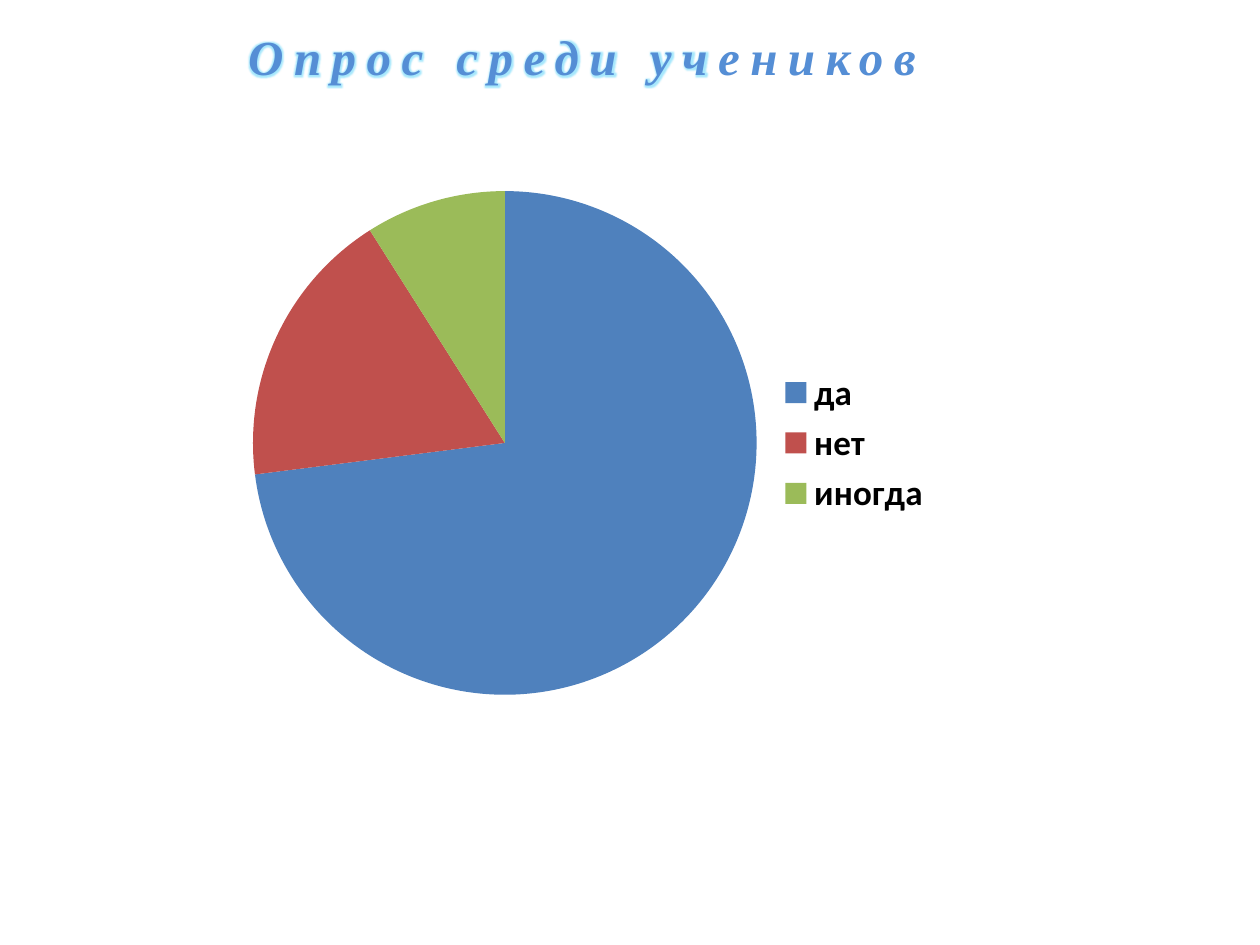
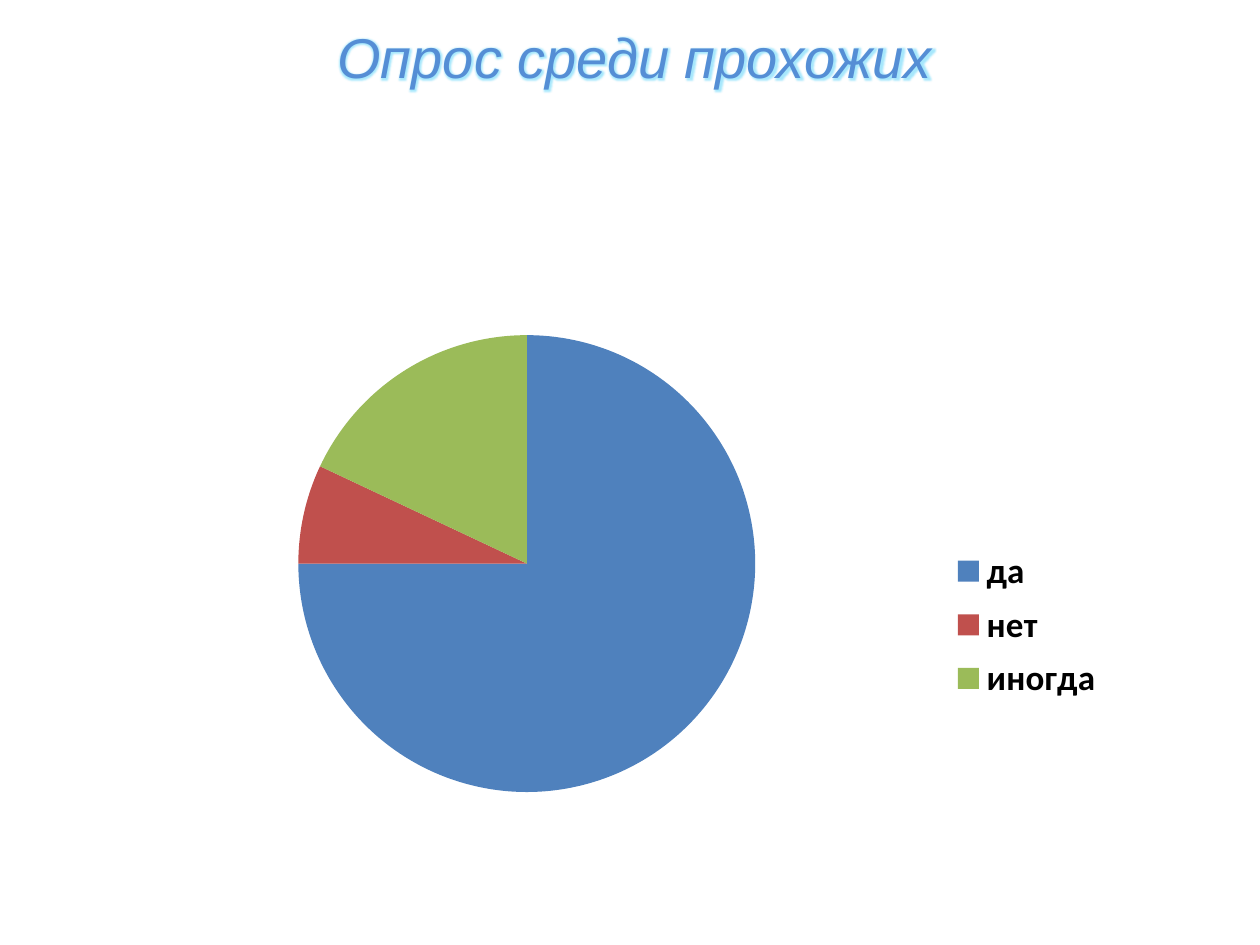
from dataclasses import dataclass
from typing import Optional

from pptx import Presentation
from pptx.chart.data import CategoryChartData
from pptx.dml.color import RGBColor
from pptx.enum.chart import XL_CHART_TYPE as ChartType, XL_LEGEND_POSITION as LegendPosition
from pptx.enum.text import MSO_ANCHOR as Anchor, MSO_AUTO_SIZE as AutoSize, PP_ALIGN as Align
from pptx.oxml import parse_xml
from pptx.oxml.ns import nsdecls, qn
from pptx.util import Cm, Pt

TITLE_COLOR = "558ED5"
GLOW_COLOR = "00BDF8"
TEXT_COLOR = "000000"
ANSWERS = {"да": "4F81BD", "нет": "C0504D", "иногда": "9BBB59"}
CHART_FONT = "Calibri"
TITLE_ONLY = 5


@dataclass(frozen=True)
class Frame:
    left: float
    top: float
    width: float
    height: float

    def lengths(self) -> tuple:
        return Cm(self.left), Cm(self.top), Cm(self.width), Cm(self.height)


@dataclass(frozen=True)
class TitleStyle:
    frame: Frame
    font: str
    size: int
    align: Align
    bold: bool = False
    spacing: int = 0
    outline: float = 0


@dataclass(frozen=True)
class Survey:
    title: str
    style: TitleStyle
    chart_frame: Frame
    shares: tuple
    # Fractions of the chart area
    plot_area: Optional[Frame] = None
    legend_area: Optional[Frame] = None


SURVEYS = (
    Survey(
        "Опрос среди учеников",
        TitleStyle(Frame(4.75, 0.4, 21.23, 1.45), "Times New Roman", 28,
                   Align.LEFT, bold=True, spacing=6),
        Frame(4.75, 1.98, 14.3, 13.9),
        (73, 18, 9),
    ),
    Survey(
        "Опрос среди прохожих",
        TitleStyle(Frame(2.3, 0.33, 21, 1.62), "Arial", 32, Align.CENTER, outline=0.75),
        Frame(1.98, 1, 24, 16.45),
        (75, 7, 18),
        plot_area=Frame(0.14, 0.35, 0.44, 0.56),
        legend_area=Frame(0.71, 0.6, 0.14, 0.21),
    ),
)


def color(value: str) -> RGBColor:
    return RGBColor.from_string(value)


def add_text_effects(span, outline: float) -> None:
    """Give the letters a soft glow and, if wanted, an outline."""
    properties = span.font._element
    glow = parse_xml(
        f'<a:effectLst {nsdecls("a")}><a:glow rad="45500"><a:srgbClr val="{GLOW_COLOR}">'
        '<a:alpha val="35000"/></a:srgbClr></a:glow></a:effectLst>')
    properties.find(qn("a:solidFill")).addnext(glow)
    if outline:
        properties.insert(0, parse_xml(
            f'<a:ln {nsdecls("a")} w="{Pt(outline)}"><a:solidFill>'
            f'<a:srgbClr val="{TITLE_COLOR}"/></a:solidFill></a:ln>'))


def format_title(page, survey: Survey) -> None:
    style = survey.style
    box = page.shapes.title
    box.left, box.top, box.width, box.height = style.frame.lengths()
    text = box.text_frame
    text.text = survey.title
    text.word_wrap = True
    text.auto_size = AutoSize.SHAPE_TO_FIT_TEXT
    text.vertical_anchor = Anchor.TOP
    para = text.paragraphs[0]
    para.alignment = style.align
    span = para.runs[0]
    font = span.font
    font.name, font.size = style.font, Pt(style.size)
    font.bold, font.italic = style.bold, True
    font.color.rgb = color(TITLE_COLOR)
    if style.spacing:
        font._element.set("spc", str(style.spacing * 100))
    add_text_effects(span, style.outline)
    # Keep the title in front of the chart
    box.element.getparent().append(box.element)


def set_layout(element, position: int, area: Frame, inner: bool = False) -> None:
    """Fix the place of a chart part inside the chart area."""
    for old in element.findall(qn("c:layout")):
        element.remove(old)
    target = '<c:layoutTarget val="inner"/>' if inner else ""
    element.insert(position, parse_xml(
        f'<c:layout {nsdecls("c")}><c:manualLayout>{target}'
        '<c:xMode val="edge"/><c:yMode val="edge"/>'
        f'<c:x val="{area.left}"/><c:y val="{area.top}"/>'
        f'<c:w val="{area.width}"/><c:h val="{area.height}"/>'
        '</c:manualLayout></c:layout>'))


def add_pie(page, survey: Survey) -> None:
    data = CategoryChartData()
    data.categories = list(ANSWERS)
    data.add_series("Series 1", survey.shares)
    chart = page.shapes.add_chart(ChartType.PIE, *survey.chart_frame.lengths(), data).chart
    chart.has_title = False
    chart.font.name, chart.font.size = CHART_FONT, Pt(10)
    chart.font.color.rgb = color(TEXT_COLOR)

    # Slices
    plot = chart.plots[0]
    plot.vary_by_categories = True
    for index, fill_color in enumerate(ANSWERS.values()):
        fill = plot.series[0].points[index].format.fill
        fill.solid()
        fill.fore_color.rgb = color(fill_color)

    # Legend
    chart.has_legend = True
    legend = chart.legend
    legend.position = LegendPosition.RIGHT
    legend.include_in_layout = False
    legend.font.name, legend.font.size, legend.font.bold = CHART_FONT, Pt(20), True
    legend.font.color.rgb = color(TEXT_COLOR)

    # Fixed places
    body = chart.element.find(qn("c:chart"))
    if survey.plot_area:
        set_layout(body.find(qn("c:plotArea")), 0, survey.plot_area, inner=True)
    if survey.legend_area:
        set_layout(body.find(qn("c:legend")), 1, survey.legend_area)


def main() -> None:
    deck = Presentation()
    deck.slide_width, deck.slide_height = Cm(25.4), Cm(19.05)
    for survey in SURVEYS:
        page = deck.slides.add_slide(deck.slide_layouts[TITLE_ONLY])
        add_pie(page, survey)
        format_title(page, survey)
    deck.save("out.pptx")


if __name__ == "__main__":
    main()
